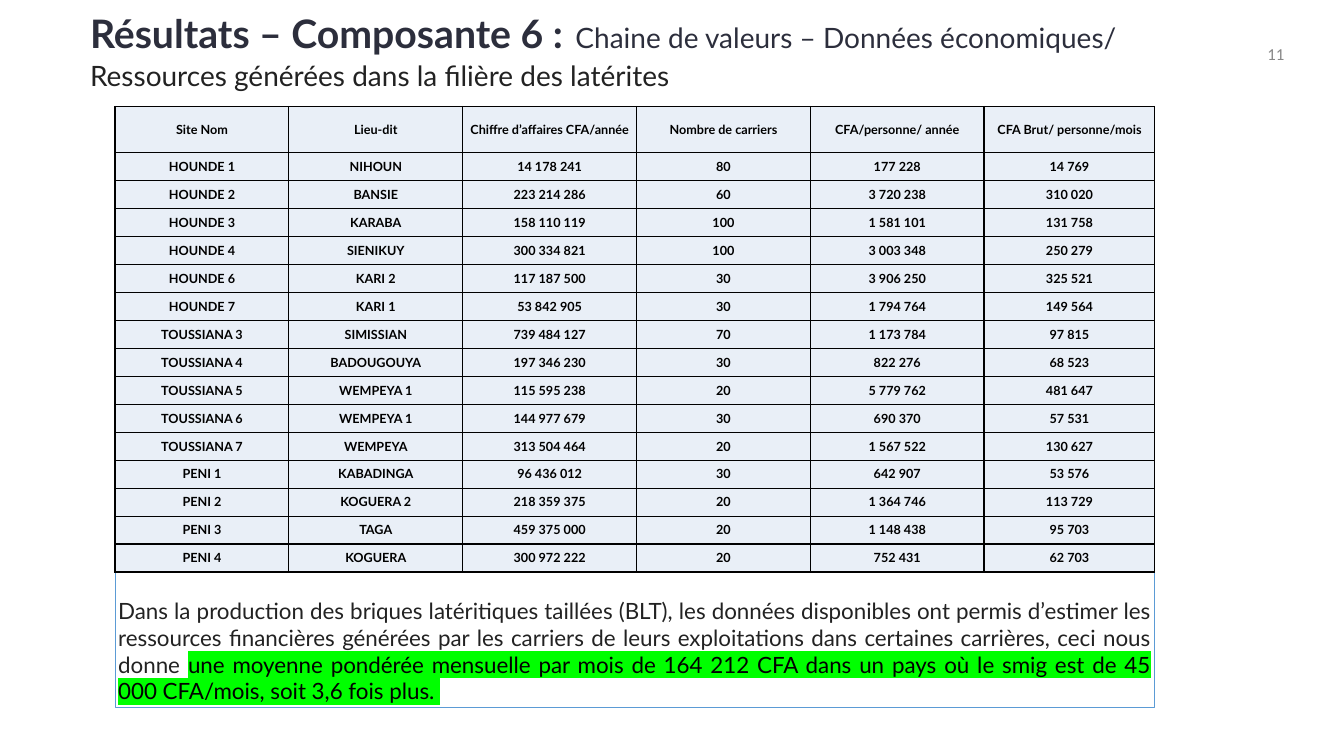
import pptx
import pptx.util
import pptx.dml.color
import pptx.enum.shapes
import pptx.enum.text
import pptx.oxml
import pptx.oxml.ns

Cm = pptx.util.Cm
Pt = pptx.util.Pt
ALIGN = pptx.enum.text.PP_ALIGN
ANCHOR = pptx.enum.text.MSO_ANCHOR
NS = pptx.oxml.ns.nsdecls("a")

BLACK, INK, NAVY, GREY = "000000", "222222", "2C2E3C", "888888"
CELL_FILL, BOX_LINE, MARKER = "E9EFF7", "5B9BD5", "00FF00"
TABLE_LEFT, TABLE_WIDTH = Cm(2.9), Cm(26.2)

HEADERS = ("Site Nom", "Lieu-dit", "Chiffre d’affaires CFA/année", "Nombre de carriers",
           "CFA/personne/ année", "CFA Brut/ personne/mois")
SITES = (
    ("HOUNDE 1", "NIHOUN", "14 178 241", "80", "177 228", "14 769"),
    ("HOUNDE 2", "BANSIE", "223 214 286", "60", "3 720 238", "310 020"),
    ("HOUNDE 3", "KARABA", "158 110 119", "100", "1 581 101", "131 758"),
    ("HOUNDE 4", "SIENIKUY", "300 334 821", "100", "3 003 348", "250 279"),
    ("HOUNDE 6", "KARI 2", "117 187 500", "30", "3 906 250", "325 521"),
    ("HOUNDE 7", "KARI 1", "53 842 905", "30", "1 794 764", "149 564"),
    ("TOUSSIANA 3", "SIMISSIAN", "739 484 127", "70", "1 173 784", "97 815"),
    ("TOUSSIANA 4", "BADOUGOUYA", "197 346 230", "30", "822 276", "68 523"),
    ("TOUSSIANA 5", "WEMPEYA 1", "115 595 238", "20", "5 779 762", "481 647"),
    ("TOUSSIANA 6", "WEMPEYA 1", "144 977 679", "30", "690 370", "57 531"),
    ("TOUSSIANA 7", "WEMPEYA", "313 504 464", "20", "1 567 522", "130 627"),
    ("PENI 1", "KABADINGA", "96 436 012", "30", "642 907", "53 576"),
    ("PENI 2", "KOGUERA 2", "218 359 375", "20", "1 364 746", "113 729"),
    ("PENI 3", "TAGA", "459 375 000", "20", "1 148 438", "95 703"),
    ("PENI 4", "KOGUERA", "300 972 222", "20", "752 431", "62 703"),
)


def rgb(value):
    return pptx.dml.color.RGBColor.from_string(value)


def set_all(obj, values):
    for name, value in values.items():
        setattr(obj, name, value)


def margins(x, y):
    return dict(margin_left=x, margin_right=x, margin_top=y, margin_bottom=y)


def add_run(p, text, size, color, bold=False, font="Lato", marker=None):
    r = p.add_run()
    r.text = text
    set_all(r.font, dict(size=Pt(size), bold=bold, name=font))
    r.font.color.rgb = rgb(color)
    if marker:
        fill = r.font._element.find(pptx.oxml.ns.qn("a:solidFill"))
        fill.addnext(pptx.oxml.parse_xml(
            f'<a:highlight {NS}><a:srgbClr val="{marker}"/></a:highlight>'))


def fill_frame(tf, paragraphs, align, frame_format):
    """Each paragraph is a list of dicts of run values."""
    set_all(tf, dict(word_wrap=True, **frame_format))
    for i, runs in enumerate(paragraphs):
        p = tf.add_paragraph() if i else tf.paragraphs[0]
        p.alignment = align
        for run in runs:
            add_run(p, **run)


def add_text(s, box, paragraphs, align, frame_format):
    sp = s.shapes.add_textbox(*box)
    fill_frame(sp.text_frame, paragraphs, align, frame_format)


def add_outlined_text(s, box, paragraphs, align, frame_format):
    sp = s.shapes.add_shape(pptx.enum.shapes.MSO_SHAPE.RECTANGLE, *box)
    sp.shadow.inherit = False
    sp.fill.background()
    sp.line.color.rgb = rgb(BOX_LINE)
    sp.line.width = Pt(0.75)
    fill_frame(sp.text_frame, paragraphs, align, frame_format)


def style_cell(cell, text):
    set_all(cell, dict(vertical_anchor=ANCHOR.MIDDLE, **margins(0, 0)))
    p = cell.text_frame.paragraphs[0]
    p.alignment = ALIGN.CENTER
    add_run(p, text, 9, BLACK, bold=True)
    tc_pr = cell._tc.get_or_add_tcPr()
    for side in ("lnL", "lnR", "lnT", "lnB"):
        tc_pr.append(pptx.oxml.parse_xml(
            f'<a:{side} {NS} w="{Pt(1)}"><a:solidFill><a:srgbClr val="{BLACK}"/>'
            f'</a:solidFill></a:{side}>'))
    cell.fill.solid()
    cell.fill.fore_color.rgb = rgb(CELL_FILL)


def add_site_table(s):
    rows = (HEADERS, *SITES)
    header_height, body_height = Cm(1.16), Cm(10.58)
    table = s.shapes.add_table(len(rows), len(HEADERS), TABLE_LEFT, Cm(2.68),
                               TABLE_WIDTH, header_height + body_height).table
    set_all(table, dict(first_row=False, horz_banding=False))
    for col in table.columns:
        col.width = Cm(4.38)
    table.columns[len(HEADERS) - 1].width = TABLE_WIDTH - Cm(4.38) * (len(HEADERS) - 1)
    for i, values in enumerate(rows):
        table.rows[i].height = body_height // len(SITES) if i else header_height
        for j, text in enumerate(values):
            style_cell(table.cell(i, j), text)


def main():
    prs = pptx.Presentation()
    set_all(prs, dict(slide_width=Cm(33.87), slide_height=Cm(19.05)))
    s = prs.slides.add_slide(prs.slide_layouts[6])

    # Page number
    add_text(s, (Cm(31.62), Cm(1.07), Cm(1), Cm(0.58)),
             [[dict(text="11", size=12, color=GREY, font="Calibri")]], ALIGN.RIGHT,
             dict(vertical_anchor=ANCHOR.MIDDLE, **margins(Cm(0.25), Cm(0.13))))

    # Title
    add_text(s, (Cm(2.27), 0, Cm(29.7), Cm(3.2)), [
        [dict(text="Résultats – Composante 6 :", size=28, color=NAVY, bold=True),
         dict(text=" ", size=35, color=NAVY),
         dict(text="Chaine de valeurs – Données économiques/", size=20, color=NAVY)],
        [dict(text="Ressources générées dans la filière des latérites", size=20, color=INK)],
    ], ALIGN.LEFT, dict(vertical_anchor=ANCHOR.TOP, **margins(0, 0)))

    # Commentary under the table
    add_outlined_text(s, (TABLE_LEFT, Cm(14.43), TABLE_WIDTH, Cm(3.4)), [[
        dict(text="Dans la production des briques latéritiques taillées (BLT), les données "
                  "disponibles ont permis d’estimer les ressources financières générées par "
                  "les carriers de leurs exploitations dans certaines carrières, ceci nous "
                  "donne ", size=16, color=INK),
        dict(text="une moyenne pondérée mensuelle par mois de 164 212 CFA dans un pays où le "
                  "smig est de 45 000 CFA/mois, soit 3,6 fois plus. ",
             size=16, color=BLACK, marker=MARKER),
    ]], ALIGN.JUSTIFY, dict(vertical_anchor=ANCHOR.BOTTOM, **margins(Cm(0.08), Cm(0.08))))

    # Revenue by site
    add_site_table(s)

    prs.save("out.pptx")


if __name__ == "__main__":
    main()
